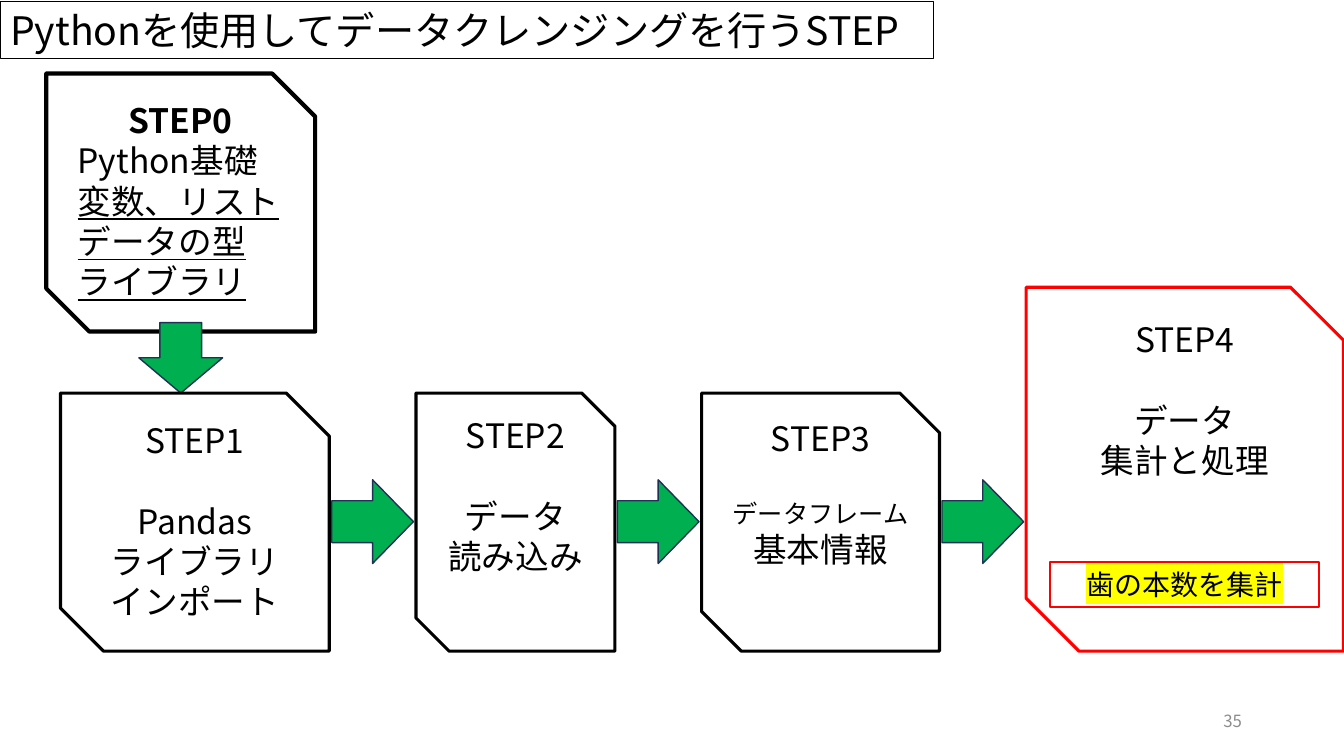
from dataclasses import dataclass

from lxml.etree import SubElement
from pptx import Presentation
from pptx.dml.color import RGBColor
from pptx.enum.shapes import MSO_SHAPE
from pptx.enum.text import MSO_ANCHOR, PP_ALIGN
from pptx.oxml.ns import qn
from pptx.util import Inches, Pt


@dataclass(frozen=True)
class Theme:
    """Colours, font and type sizes of the deck."""
    font: str = "Noto Sans CJK JP"
    ink: str = "000000"
    paper: str = "FFFFFF"
    accent: str = "FF0000"
    arrow: str = "00B050"
    arrow_edge: str = "1E3256"
    marker: str = "FFFF00"
    muted: str = "8C8C8C"
    title: int = 28
    body: int = 24
    label: int = 20
    small: int = 18
    number: int = 12
    blank_line: int = 29


def add_span(para, text, theme, size=None, color=None, bold=False, underline=False, highlight=None):
    """Add one formatted run to a paragraph."""
    span = para.add_run()
    span.text = text
    span.font.size = Pt(size or theme.body)
    span.font.bold = bold
    span.font.underline = underline
    span.font.color.rgb = RGBColor.from_string(color or theme.ink)
    properties = span.font._element
    if highlight:
        marker = SubElement(properties, qn("a:highlight"))
        SubElement(marker, qn("a:srgbClr")).set("val", highlight)
    for script in ("latin", "ea"):
        SubElement(properties, qn(f"a:{script}")).set("typeface", theme.font)


class Page:
    """A slide with its theme, measured in percent of width and height."""

    def __init__(self, deck, theme):
        """Add a title-only slide to the deck."""
        self.deck = deck
        self.theme = theme
        self.slide = deck.slides.add_slide(deck.slide_layouts[5])

    def frame(self, left, top, width, height):
        """Turn shares of the slide into lengths."""
        across, down = self.deck.slide_width / 100, self.deck.slide_height / 100
        return [int(v) for v in (left * across, top * down, width * across, height * down)]

    def paint(self, box, fill, line, weight):
        """Set the fill and outline of a box."""
        if fill:
            box.fill.solid()
            box.fill.fore_color.rgb = RGBColor.from_string(fill)
        else:
            box.fill.background()
        box.line.color.rgb = RGBColor.from_string(line)
        box.line.width = Pt(weight)

    def fill_text(self, box, lines, align=PP_ALIGN.CENTER, anchor=MSO_ANCHOR.TOP, head_gap=0):
        """Fill a box with lines, each a list of (text, format) spans."""
        frame = box.text_frame
        frame.word_wrap = True
        frame.vertical_anchor = anchor
        for index, spans in enumerate(lines):
            para = frame.add_paragraph() if index else frame.paragraphs[0]
            para.alignment = align if index or len(lines) == 1 else PP_ALIGN.CENTER
            para.line_spacing = 1.0
            para.space_before = Pt(0)
            para.space_after = Pt(0 if index else head_gap)
            for text, style in spans:
                add_span(para, text, self.theme, **style)

    def title(self, text, *place):
        """Place the outlined slide title."""
        box = self.slide.shapes.title
        box.left, box.top, box.width, box.height = self.frame(*place)
        self.paint(box, self.theme.paper, self.theme.ink, 0.5)
        self.fill_text(box, [[(text, {"size": self.theme.title})]], PP_ALIGN.JUSTIFY)

    def shape(self, kind, place, fill, line, weight):
        """Add a flat preset shape."""
        box = self.slide.shapes.add_shape(kind, *self.frame(*place))
        box.shadow.inherit = False
        self.paint(box, fill, line, weight)
        return box

    def step(self, place, lines, line=None, weight=2.25, **layout):
        """Add a step card with two snipped corners."""
        box = self.shape(MSO_SHAPE.SNIP_2_DIAG_RECTANGLE, place, self.theme.paper,
                         line or self.theme.ink, weight)
        self.fill_text(box, lines, **layout)

    def arrow(self, center, middle, width, height, rotation=0):
        """Add a green arrow around a centre point."""
        place = (center - width / 2, middle - height / 2, width, height)
        box = self.shape(MSO_SHAPE.DOWN_ARROW, place, self.theme.arrow, self.theme.arrow_edge, 1)
        box.rotation = rotation

    def label(self, text, *place):
        """Add a red-framed, highlighted label."""
        box = self.shape(MSO_SHAPE.RECTANGLE, place, None, self.theme.accent, 1.5)
        self.fill_text(box, [[(text, {"size": self.theme.label, "highlight": self.theme.marker})]])

    def number(self, text, *place):
        """Add the page number."""
        box = self.slide.shapes.add_textbox(*self.frame(*place))
        style = {"size": self.theme.number, "color": self.theme.muted}
        self.fill_text(box, [[(text, style)]], PP_ALIGN.RIGHT, MSO_ANCHOR.MIDDLE)


def main():
    """Build the data cleansing steps slide."""
    deck = Presentation()
    deck.slide_width, deck.slide_height = Inches(13.33), Inches(7.5)
    theme = Theme()
    page = Page(deck, theme)
    page.title("Pythonを使用してデータクレンジングを行うSTEP", 0, 0.13, 69.45, 7.6)
    page.number("35", 70.65, 92.67, 22.5, 5.33)

    underlined = [[(text, {"underline": True})] for text in ("変数、リスト", "データの型", "ライブラリ")]
    basics = [[("STEP0", {"bold": True})], [("Python基礎", {})], *underlined]
    page.step((3.45, 9.73, 20, 34.13), basics, weight=3, align=PP_ALIGN.JUSTIFY)
    page.arrow(13.45, 47.33, 6.23, 9.33)

    steps = [
        (20, 52, theme.ink, [[("Pandas", {})], [("ライブラリ", {})], [("インポート", {})]]),
        (14.8, 52, theme.ink, [[("データ", {})], [("読み込み", {})]]),
        (17.7, 52, theme.ink, [[("データフレーム", {"size": theme.small}), ("基本情報", {})]]),
        (23.6, 38, theme.accent, [[("データ", {})], [("集計と処理", {})]]),
    ]
    left, gap, bottom = 4.5, 6.45, 86.13
    for index, (width, top, line, lines) in enumerate(steps, 1):
        page.step((left, top, width, bottom - top), [[(f"STEP{index}", {})], *lines],
                  line=line, head_gap=theme.blank_line)
        left += width + gap
        if index < len(steps):
            page.arrow(left - gap / 2, 69, 6.23, 10.8, rotation=270)
    page.label("歯の本数を集計", 78.15, 74.4, 20, 5.87)
    deck.save("out.pptx")


if __name__ == "__main__":
    main()
